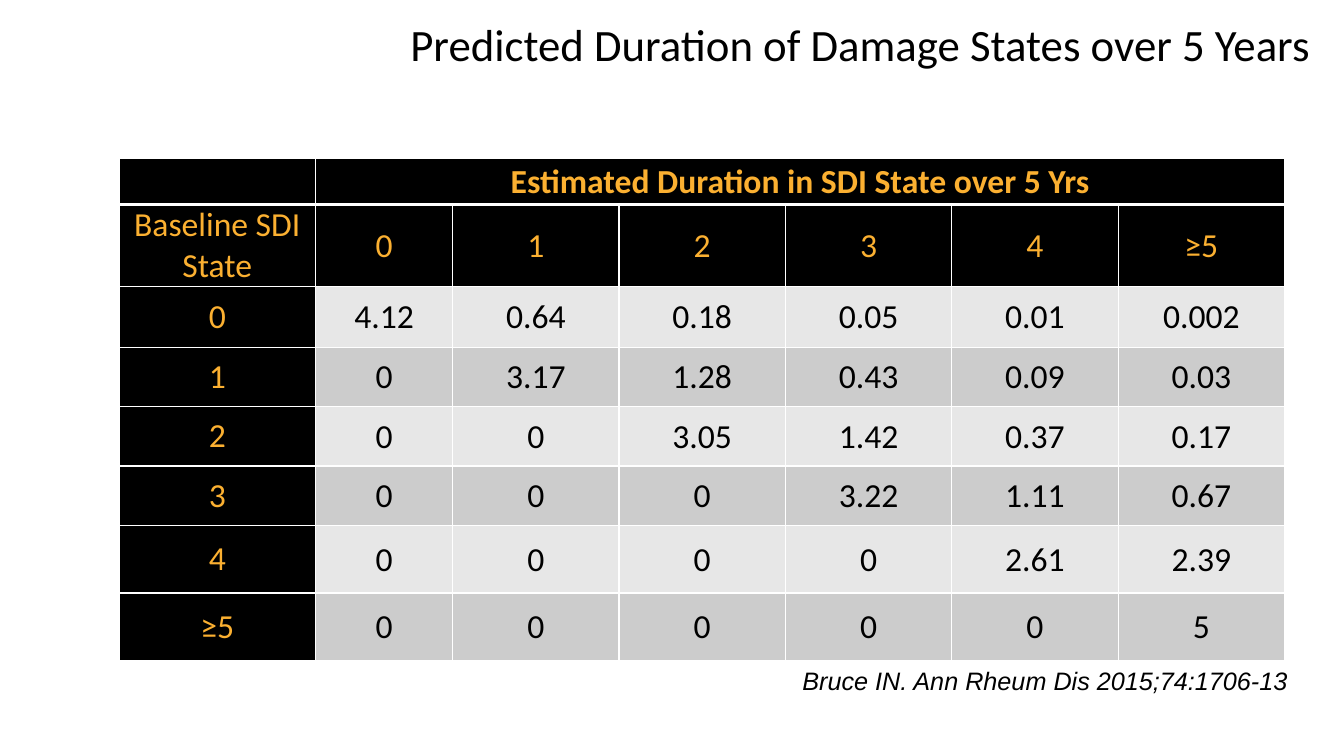
from dataclasses import dataclass
from lxml.etree import SubElement
from pptx import Presentation
from pptx.dml.color import RGBColor
from pptx.enum.text import MSO_ANCHOR, MSO_AUTO_SIZE, PP_ALIGN
from pptx.oxml.ns import qn
from pptx.util import Inches, Pt


@dataclass(frozen=True)
class Theme:
    black: str = "000000"
    white: str = "FFFFFF"
    gold: str = "FBB031"
    bands: tuple = ("E7E7E7", "CCCCCC")
    font: str = "Calibri"
    note_font: str = "Arial"
    title_size: int = 32
    table_size: int = 24
    note_size: int = 18
    rule: int = 1
    heavy_rule: int = 3


THEME = Theme()
STATES = ["0", "1", "2", "3", "4", "≥5"]
DURATIONS = [
    ["4.12", "0.64", "0.18", "0.05", "0.01", "0.002"],
    ["0", "3.17", "1.28", "0.43", "0.09", "0.03"],
    ["0", "0", "3.05", "1.42", "0.37", "0.17"],
    ["0", "0", "0", "3.22", "1.11", "0.67"],
    ["0", "0", "0", "0", "2.61", "2.39"],
    ["0", "0", "0", "0", "0", "5"],
]
COL_WIDTHS = [1.95, 1.36] + [1.65] * 5
ROW_HEIGHTS = [0.46, 0.81, 0.6] + [0.59] * 3 + [0.67] * 2


def set_attrs(target, values):
    for name, value in values.items():
        setattr(target, name, value)


def write(tf, text, size, color, font, align, **style):
    p = tf.paragraphs[0]
    p.alignment = align
    r = p.add_run()
    r.text = text
    set_attrs(r.font, {"size": Pt(size), "name": font, **style})
    r.font.color.rgb = RGBColor.from_string(color)


def add_title(s, box, text):
    title = s.shapes.title
    set_attrs(title, dict(zip(("left", "top", "width", "height"), map(Inches, box))))
    tf = title.text_frame
    set_attrs(tf, {
        "auto_size": MSO_AUTO_SIZE.NONE,
        "vertical_anchor": MSO_ANCHOR.MIDDLE,
        "word_wrap": True,
        "margin_right": Inches(0.2),
    })
    write(tf, text, THEME.title_size, THEME.black, THEME.font, PP_ALIGN.RIGHT)


def set_borders(cell, widths):
    tc_pr = cell._tc.get_or_add_tcPr()
    for i, (side, width) in enumerate(widths.items()):
        line = tc_pr.makeelement(qn(f"a:ln{side}"), {"w": str(Pt(width))})
        fill = SubElement(line, qn("a:solidFill"))
        SubElement(fill, qn("a:srgbClr"), val=THEME.white)
        tc_pr.insert(i, line)


def format_cell(cell, row, col, text):
    header = row < 2 or col == 0
    cell.fill.solid()
    cell.fill.fore_color.rgb = RGBColor.from_string(
        THEME.black if header else THEME.bands[row % 2])
    side, top = (0.08, 0) if col == 0 else (0.01, 0.01)
    set_attrs(cell, {
        "vertical_anchor": MSO_ANCHOR.MIDDLE,
        "margin_left": Inches(side),
        "margin_right": Inches(side),
        "margin_top": Inches(top),
        "margin_bottom": 0,
    })
    set_borders(cell, {
        "L": THEME.rule,
        "R": THEME.rule,
        "T": THEME.heavy_rule if row == 1 else THEME.rule,
        "B": THEME.heavy_rule if row == 0 else THEME.rule,
    })
    if text:
        write(cell.text_frame, text, THEME.table_size,
              THEME.gold if header else THEME.black,
              THEME.font, PP_ALIGN.CENTER, bold=row == 0)


def add_duration_table(s, box):
    rows = [["", "Estimated Duration in SDI State over 5 Yrs"] + [""] * 5,
            ["Baseline SDI State"] + STATES]
    rows += [[state] + values for state, values in zip(STATES, DURATIONS)]
    table = s.shapes.add_table(len(rows), len(rows[0]), *map(Inches, box)).table
    for column, width in zip(table.columns, COL_WIDTHS):
        column.width = Inches(width)
    for row, height in zip(table.rows, ROW_HEIGHTS):
        row.height = Inches(height)
    table.cell(0, 1).merge(table.cell(0, len(STATES)))
    for i, values in enumerate(rows):
        for j, text in enumerate(values):
            format_cell(table.cell(i, j), i, j, text)


def add_citation(s, box, text):
    tf = s.shapes.add_textbox(*map(Inches, box)).text_frame
    set_attrs(tf, {"word_wrap": False, "auto_size": MSO_AUTO_SIZE.SHAPE_TO_FIT_TEXT})
    write(tf, text, THEME.note_size, THEME.black, THEME.note_font,
          PP_ALIGN.LEFT, italic=True)


def main():
    prs = Presentation()
    set_attrs(prs, {"slide_width": Inches(13.33), "slide_height": Inches(7.5)})
    s = prs.slides.add_slide(prs.slide_layouts[5])
    add_title(s, (2.25, 0, 10.95, 0.87),
              "Predicted Duration of Damage States over 5 Years")
    left, top = 1.18, 1.57
    width, height = sum(COL_WIDTHS), sum(ROW_HEIGHTS)
    add_duration_table(s, (left, top, width, height))
    add_citation(s, (7.86, top + height, 5.12, 0.4),
                 "Bruce IN. Ann Rheum Dis 2015;74:1706-13")
    prs.save("out.pptx")


if __name__ == "__main__":
    main()
